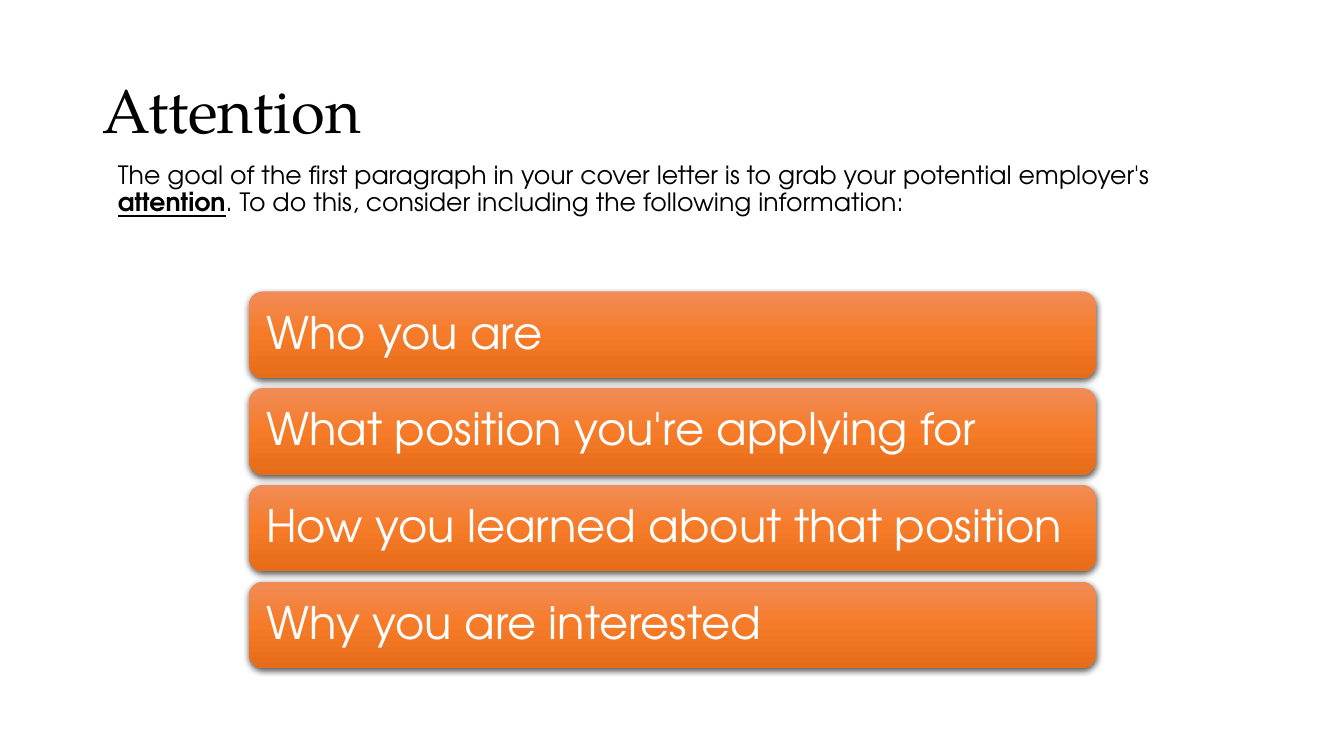
from dataclasses import dataclass

from lxml import etree
from pptx import Presentation
from pptx.dml.color import RGBColor
from pptx.enum.shapes import MSO_SHAPE
from pptx.enum.text import MSO_ANCHOR, MSO_AUTO_SIZE, PP_ALIGN
from pptx.oxml import parse_xml
from pptx.oxml.ns import nsdecls, qn
from pptx.util import Inches, Pt

ROUNDED = MSO_SHAPE.ROUNDED_RECTANGLE
TOP, MIDDLE = MSO_ANCHOR.TOP, MSO_ANCHOR.MIDDLE
LEFT = PP_ALIGN.LEFT
NO_AUTOFIT = MSO_AUTO_SIZE.NONE


@dataclass(frozen=True)
class Theme:
    heading_font: str = "TeX Gyre Pagella"
    body_font: str = "TeX Gyre Adventor"
    ink: str = "000000"
    bar_text: str = "FFFFFF"
    bar_gradient: tuple = ((0, "F18C57"), (50, "F67B28"), (100, "E56C19"))
    shadow: str = "000000"
    title_size: int = 44
    body_size: int = 18
    bar_size: int = 32


THEME = Theme()

TITLE = "Attention"
GOAL = (
    ("The goal of the first paragraph in your cover letter is to grab "
     "your potential employer's ", {}),
    ("attention", {"bold": True, "underline": True}),
    (". To do this, consider including the following information:", {}),
)
POINTS = (
    "Who you are",
    "What position you're applying for",
    "How you learned about that position",
    "Why you are interested",
)

BAR_LEFT, BAR_TOP, BAR_WIDTH, BAR_HEIGHT = 2.47, 2.89, 8.4, 0.86
BAR_PITCH = 0.96
BAR_INSET = 0.13


def apply_format(target, values):
    for name, value in values.items():
        setattr(target, name, value)


def place(shape, left, top, width, height):
    apply_format(shape, {
        "left": Inches(left), "top": Inches(top),
        "width": Inches(width), "height": Inches(height),
    })


def write_spans(para, spans, font, size, color):
    apply_format(para, {"alignment": LEFT, "line_spacing": 0.9, "space_before": Pt(0)})
    for text, emphasis in spans:
        span = para.add_run()
        span.text = text
        apply_format(span.font, {"name": font, "size": Pt(size), **emphasis})
        span.font.color.rgb = RGBColor.from_string(color)


def remove_bullet(para):
    properties = para._p.get_or_add_pPr()
    apply_attributes = {"marL": "0", "indent": "0"}
    for name, value in apply_attributes.items():
        properties.set(name, value)
    etree.SubElement(properties, qn("a:buNone"))


def fill_vertical_gradient(shape, stops):
    stop_xml = "".join(
        f'<a:gs pos="{percent * 1000}"><a:srgbClr val="{color}"/></a:gs>'
        for percent, color in stops
    )
    shape._element.spPr.append(parse_xml(
        f'<a:gradFill {nsdecls("a")} rotWithShape="1"><a:gsLst>{stop_xml}</a:gsLst>'
        '<a:lin ang="5400000" scaled="0"/></a:gradFill>'
    ))


def add_soft_shadow(shape):
    shape.shadow.inherit = False
    effects = shape._element.spPr.find(qn("a:effectLst"))
    effects.append(parse_xml(
        f'<a:outerShdw {nsdecls("a")} blurRad="{Pt(4.5)}" dist="{Pt(1.5)}" '
        f'dir="5400000" algn="ctr" rotWithShape="0"><a:srgbClr val="{THEME.shadow}">'
        '<a:alpha val="63000"/></a:srgbClr></a:outerShdw>'
    ))


def fill_title(page):
    title = page.shapes.title
    place(title, 0.92, 0.4, 11.5, 1.45)
    frame = title.text_frame
    apply_format(frame, {"auto_size": NO_AUTOFIT, "vertical_anchor": MIDDLE})
    write_spans(frame.paragraphs[0], [(TITLE, {})],
                THEME.heading_font, THEME.title_size, THEME.ink)


def fill_goal(page):
    body = page.placeholders[1]
    place(body, 1.07, 1.56, 11.5, 4.76)
    frame = body.text_frame
    apply_format(frame, {"auto_size": NO_AUTOFIT, "vertical_anchor": TOP})
    para = frame.paragraphs[0]
    remove_bullet(para)
    write_spans(para, GOAL, THEME.body_font, THEME.body_size, THEME.ink)


def add_bar(page, text, top):
    bar = page.shapes.add_shape(ROUNDED, Inches(BAR_LEFT), Inches(top),
                                Inches(BAR_WIDTH), Inches(BAR_HEIGHT))
    fill_vertical_gradient(bar, THEME.bar_gradient)
    bar.line.fill.background()
    add_soft_shadow(bar)
    frame = bar.text_frame
    apply_format(frame, {"word_wrap": True, "vertical_anchor": MIDDLE})
    sides = ("left", "top", "right", "bottom")
    apply_format(frame, {f"margin_{side}": Inches(BAR_INSET) for side in sides})
    write_spans(frame.paragraphs[0], [(text, {})],
                THEME.body_font, THEME.bar_size, THEME.bar_text)


def main():
    deck = Presentation()
    apply_format(deck, {"slide_width": Inches(13.33), "slide_height": Inches(7.5)})
    page = deck.slides.add_slide(deck.slide_layouts[1])
    fill_title(page)
    fill_goal(page)
    for index, text in enumerate(POINTS):
        add_bar(page, text, BAR_TOP + index * BAR_PITCH)
    deck.save("out.pptx")


if __name__ == "__main__":
    main()
